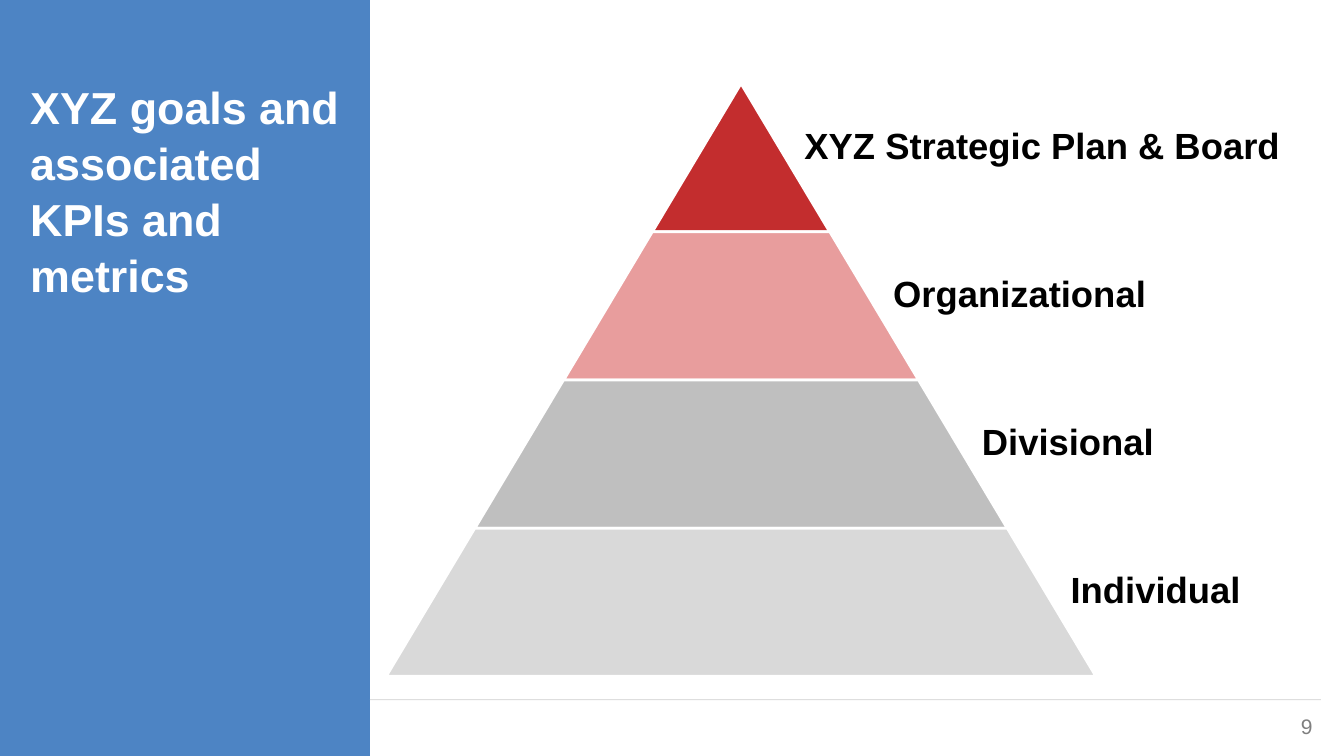
import pptx
import pptx.util
import pptx.dml.color
import pptx.enum.shapes
import pptx.enum.text
import pptx.oxml.ns
from dataclasses import dataclass
from lxml import etree
from pptx.util import Inches


@dataclass(frozen=True)
class Theme:
    font: str = "Arial"
    panel: str = "4D84C4"
    white: str = "FFFFFF"
    black: str = "000000"
    number: str = "7F7F7F"
    rule: str = "BFBFBF"
    title_size: int = 32
    label_size: int = 26
    number_size: int = 15


class PageBuilder:
    """Holds the theme and the current page."""

    def __init__(self, page, theme):
        self.page, self.theme = page, theme

    def paint(self, shape, fill, color, opacity=100):
        fill.solid()
        fill.fore_color.rgb = pptx.dml.color.RGBColor.from_string(color)
        if opacity < 100:
            tint = next(shape._element.spPr.iter(pptx.oxml.ns.qn("a:srgbClr")))
            etree.SubElement(tint, pptx.oxml.ns.qn("a:alpha"), val=str(opacity * 1000))

    def set_text(self, box, text, size, color, margins, bold=True, spacing=1.0, align="LEFT"):
        frame = box.text_frame
        frame.word_wrap = True
        frame.auto_size = pptx.enum.text.MSO_AUTO_SIZE.NONE
        frame.vertical_anchor = pptx.enum.text.MSO_ANCHOR.TOP
        (frame.margin_left, frame.margin_top,
         frame.margin_right, frame.margin_bottom) = map(Inches, margins)
        para = frame.paragraphs[0]
        para.text = text
        para.alignment = pptx.enum.text.PP_ALIGN[align]
        para.line_spacing = spacing
        para.space_before = pptx.util.Pt(0)
        para.font.name, para.font.size, para.font.bold = self.theme.font, pptx.util.Pt(size), bold
        para.font.color.rgb = pptx.dml.color.RGBColor.from_string(color)

    def title_panel(self, text, width, height):
        panel = self.page.shapes.title
        panel.left, panel.top, panel.width, panel.height = map(Inches, (0, 0, width, height))
        self.paint(panel, panel.fill, self.theme.panel)
        self.set_text(panel, text, self.theme.title_size, self.theme.white,
                      (0.3, 0.77, 0.2, 0.05), spacing=1.04)

    def rule(self, left, right, top):
        line = self.page.shapes.add_connector(
            pptx.enum.shapes.MSO_CONNECTOR.STRAIGHT, *map(Inches, (left, top, right, top)))
        line.line.width = pptx.util.Pt(0.75)
        self.paint(line, line.line.fill, self.theme.rule, 50)
        etree.SubElement(line._element.spPr, pptx.oxml.ns.qn("a:effectLst"))

    def tier(self, group, left, top, width, height, color, opacity):
        tier = group.shapes.add_shape(
            pptx.enum.shapes.MSO_SHAPE.TRAPEZOID, *map(Inches, (left, top, width, height)))
        tier.adjustments[0] = 0.598
        tier.shadow.inherit = False
        self.paint(tier, tier.fill, color, opacity)
        self.paint(tier, tier.line.fill, self.theme.white)
        tier.line.width = pptx.util.Pt(2)

    def text_box(self, text, area, size, color, margins, **style):
        box = self.page.shapes.add_textbox(*map(Inches, area))
        self.set_text(box, text, size, color, margins, **style)


def main():
    deck = pptx.Presentation()
    deck.slide_width, deck.slide_height = Inches(13.33), Inches(7.5)
    theme = Theme()
    builder = PageBuilder(deck.slides.add_slide(deck.slide_layouts[5]), theme)

    # Title panel and footer
    builder.title_panel("XYZ goals and associated KPIs and metrics", 3.67, 7.5)
    builder.rule(3.67, 13.1, 6.94)
    builder.text_box("9", (12.6, 7.03, 0.72, 0.4), theme.number_size, theme.number,
                     (0, 0.05, 0, 0.05), bold=False, align="CENTER")

    # Pyramid: each tier is one step wider on both sides
    tiers = [
        ("XYZ Strategic Plan & Board", "C32D2E", 100),
        ("Organizational", "E17B7C", 74),
        ("Divisional", "BFBFBF", 100),
        ("Individual", "D9D9D9", 100),
    ]
    apex, top, step, height = 7.35, 0.83, 0.88, 1.47
    pyramid = builder.page.shapes.add_group_shape()
    for level, (label, color, opacity) in enumerate(tiers):
        half = step * (level + 1)
        tier_top = top + height * level
        builder.tier(pyramid, apex - half, tier_top, 2 * half, height, color, opacity)
        # Label beside the sloping edge
        label_left = 7.88 + step * level
        builder.text_box(label, (label_left, tier_top + 0.39, 13.33 - label_left, 1.05),
                         theme.label_size, theme.black, (0.1, 0.05, 0.1, 0), spacing=0.9)

    deck.save("out.pptx")


if __name__ == "__main__":
    main()
